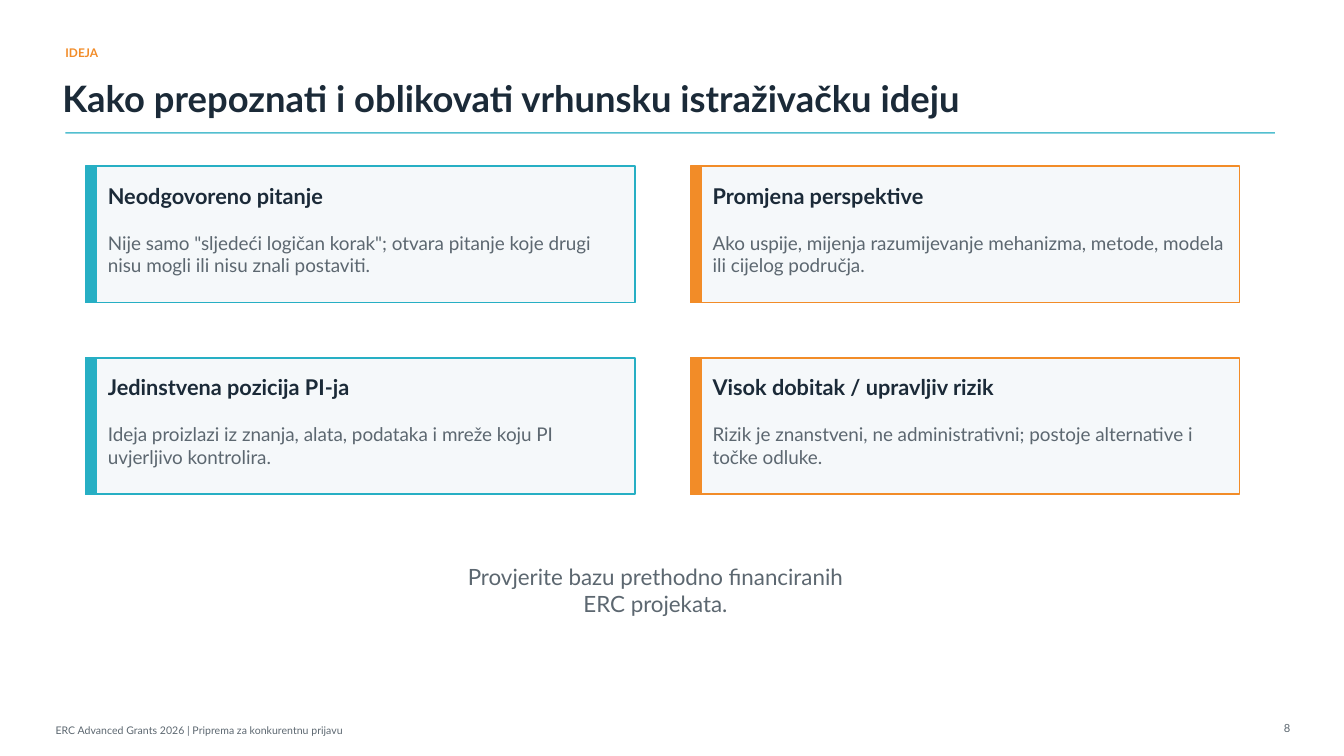
import lxml.etree
import pptx
import pptx.dml.color
import pptx.enum.shapes
import pptx.enum.text
import pptx.oxml.ns
import pptx.util

Cm = pptx.util.Cm
Pt = pptx.util.Pt
RGBColor = pptx.dml.color.RGBColor
Align = pptx.enum.text.PP_ALIGN
qn = pptx.oxml.ns.qn

WHITE = RGBColor(0xFF, 0xFF, 0xFF)
NAVY = RGBColor(0x1B, 0x2A, 0x38)
GRAY = RGBColor(0x5C, 0x67, 0x70)
PALE = RGBColor(0xF5, 0xF8, 0xFA)
TEAL = RGBColor(0x27, 0xAF, 0xC4)
ORANGE = RGBColor(0xF2, 0x8C, 0x28)
FONT = "Lato"

CARDS = [
    ("Neodgovoreno pitanje",
     'Nije samo "sljedeći logičan korak"; otvara pitanje koje drugi '
     "nisu mogli ili nisu znali postaviti."),
    ("Promjena perspektive",
     "Ako uspije, mijenja razumijevanje mehanizma, metode, modela "
     "ili cijelog područja."),
    ("Jedinstvena pozicija PI-ja",
     "Ideja proizlazi iz znanja, alata, podataka i mreže koju PI "
     "uvjerljivo kontrolira."),
    ("Visok dobitak / upravljiv rizik",
     "Rizik je znanstveni, ne administrativni; postoje alternative i "
     "točke odluke."),
]


def put_text(shape, text, size=13.5, color=GRAY, bold=False, align=Align.LEFT):
    frame = shape.text_frame
    frame.word_wrap = True
    frame.auto_size = pptx.enum.text.MSO_AUTO_SIZE.NONE
    frame.vertical_anchor = pptx.enum.text.MSO_ANCHOR.MIDDLE
    frame.margin_left = frame.margin_right = 0
    frame.margin_top = frame.margin_bottom = 0
    frame.text = text
    line = frame.paragraphs[0]
    line.alignment = align
    font = line.runs[0].font
    font.name = FONT
    font.size = Pt(size)
    font.bold = bold
    font.color.rgb = color


def add_text(slide, left, top, width, height, text, **style):
    box = slide.shapes.add_textbox(Cm(left), Cm(top), Cm(width), Cm(height))
    put_text(box, text, **style)


def add_title(slide, text):
    title = slide.shapes.title
    title.left, title.top = Cm(1.57), Cm(1.78)
    title.width, title.height = Cm(30.23), Cm(1.4)
    put_text(title, text, size=26, color=NAVY, bold=True)


def add_rule(slide, left, right, top):
    """Draw a slightly transparent line under the title."""
    rule = slide.shapes.add_connector(
        pptx.enum.shapes.MSO_CONNECTOR.STRAIGHT,
        Cm(left), Cm(top), Cm(right), Cm(top))
    rule.line.color.rgb = TEAL
    rule.line.width = Pt(1.1)
    props = rule._element.spPr
    tint = props.find(".//" + qn("a:srgbClr"))
    lxml.etree.SubElement(tint, qn("a:alpha"), val="80000")
    lxml.etree.SubElement(props, qn("a:effectLst"))


def add_rect(slide, left, top, width, height, fill, edge, weight):
    rect = slide.shapes.add_shape(
        pptx.enum.shapes.MSO_SHAPE.RECTANGLE,
        Cm(left), Cm(top), Cm(width), Cm(height))
    rect.shadow.inherit = False
    rect.fill.solid()
    rect.fill.fore_color.rgb = fill
    rect.line.color.rgb = edge
    rect.line.width = Pt(weight)


def add_card(slide, left, top, color, head, body):
    add_rect(slide, left, top, 13.84, 3.43, PALE, color, 1.1)
    add_rect(slide, left, top, 0.28, 3.43, color, color, 1)
    add_text(slide, left + 0.56, top + 0.38, 12.95, 0.71, head,
             size=15.5, color=NAVY, bold=True)
    add_text(slide, left + 0.56, top + 1.32, 12.95, 1.78, body)


def main():
    deck = pptx.Presentation()
    deck.slide_width, deck.slide_height = Cm(33.87), Cm(19.05)
    slide = deck.slides.add_slide(deck.slide_layouts.get_by_name("Title Only"))
    slide.background.fill.solid()
    slide.background.fill.fore_color.rgb = WHITE

    add_text(slide, 1.65, 1.02, 29.97, 0.61, "IDEJA",
             size=8.5, color=ORANGE, bold=True)
    add_title(slide, "Kako prepoznati i oblikovati vrhunsku istraživačku ideju")
    add_rule(slide, 1.65, 32.13, 3.35)

    for index, (head, body) in enumerate(CARDS):
        row, col = divmod(index, 2)
        add_card(slide, 2.16 + 15.24 * col, 4.19 + 4.83 * row,
                 (TEAL, ORANGE)[col], head, body)

    add_text(slide, 11.63, 13.54, 9.78, 2.64,
             "Provjerite bazu prethodno financiranih ERC projekata.",
             size=16, align=Align.CENTER)
    add_text(slide, 1.4, 18.16, 18.8, 0.51,
             "ERC Advanced Grants 2026 | Priprema za konkurentnu prijavu",
             size=7.5)
    add_text(slide, 31.88, 18.08, 0.64, 0.51, "8", size=8, align=Align.RIGHT)
    deck.save("out.pptx")


if __name__ == "__main__":
    main()
